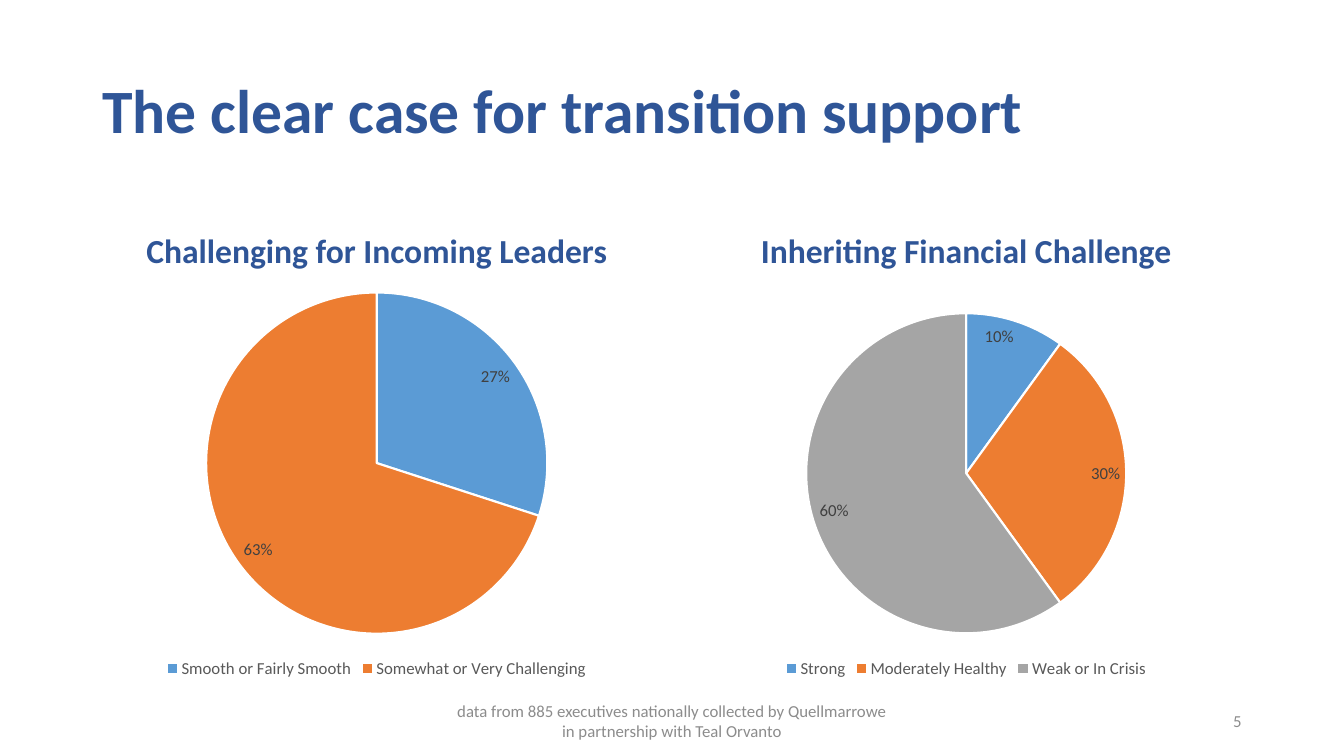
"""Build the transition support slide with its two pie charts."""
import pptx
import pptx.chart.data
import pptx.dml.color
import pptx.enum.chart
import pptx.enum.text
import pptx.oxml
import pptx.oxml.ns
import pptx.util

Cm, Pt = pptx.util.Cm, pptx.util.Pt
RGB = pptx.dml.color.RGBColor
ALIGN = pptx.enum.text.PP_ALIGN
ANCHOR = pptx.enum.text.MSO_ANCHOR
CHART = pptx.enum.chart

NAVY = RGB(0x2F, 0x55, 0x97)
FOOTER_GRAY = RGB(0x8C, 0x8C, 0x8C)
LEGEND_GRAY = RGB(0x59, 0x59, 0x59)
LABEL_GRAY = RGB(0x40, 0x40, 0x40)
WHITE = RGB(0xFF, 0xFF, 0xFF)
SLICES = [RGB(0x5B, 0x9B, 0xD5), RGB(0xED, 0x7D, 0x31), RGB(0xA5, 0xA5, 0xA5)]
FONT = "Calibri"

TITLE = "The clear case for transition support"
SOURCE = ("data from 885 executives nationally collected by Quellmarrowe "
          "in partnership with Teal Orvanto")
PAGE = "5"
PANELS = [
    {"heading": "Challenging for Incoming Leaders", "left": 2.33, "width": 14.33,
     "shares": {"Smooth or Fairly Smooth": 0.27, "Somewhat or Very Challenging": 0.63},
     "pie": {"x": 0.2, "y": 0.04, "w": 0.6, "h": 0.84}},
    {"heading": "Inheriting Financial Challenge", "left": 17.15, "width": 14.4,
     "shares": {"Strong": 0.1, "Moderately Healthy": 0.3, "Weak or In Crisis": 0.6},
     "pie": {"x": 0.22, "y": 0.09, "w": 0.56, "h": 0.79}},
]
HEADING_TOP, HEADING_HEIGHT = 4.67, 2.29
CHART_TOP, CHART_HEIGHT = HEADING_TOP + HEADING_HEIGHT, 10.24
FOOTER_TOP, FOOTER_HEIGHT = 17.65, 1.02

TITLE_FONT = {"name": FONT, "size": Pt(44), "bold": True}
HEADING_FONT = {"name": FONT, "size": Pt(24), "bold": True}
SMALL_FONT = {"name": FONT, "size": Pt(12), "bold": False}


def style(font, values, color):
    for key, value in values.items():
        setattr(font, key, value)
    font.color.rgb = color


def add_text(slide, box, text, font, color, anchor, paragraph_format):
    frame = slide.shapes.add_textbox(*map(Cm, box)).text_frame
    frame.word_wrap = True
    frame.vertical_anchor = anchor
    paragraph = frame.paragraphs[0]
    for key, value in paragraph_format.items():
        setattr(paragraph, key, value)
    run = paragraph.add_run()
    run.text = text
    style(run.font, font, color)


def place_pie(chart, pie):
    plot_area = chart.element.xpath("c:chart/c:plotArea")[0]
    for layout in plot_area.xpath("c:layout"):
        plot_area.remove(layout)
    modes = '<c:layoutTarget val="inner"/><c:xMode val="edge"/><c:yMode val="edge"/>'
    sizes = "".join(f'<c:{key} val="{value}"/>' for key, value in pie.items())
    plot_area.insert(0, pptx.oxml.parse_xml(
        f'<c:layout {pptx.oxml.ns.nsdecls("c")}><c:manualLayout>'
        f'{modes}{sizes}</c:manualLayout></c:layout>'))


def add_pie(slide, box, shares, pie):
    data = pptx.chart.data.CategoryChartData(number_format="0%")
    data.categories = list(shares)
    data.add_series("Series 1", list(shares.values()))
    chart = slide.shapes.add_chart(CHART.XL_CHART_TYPE.PIE, *map(Cm, box), data).chart
    chart.has_title = False
    chart.has_legend = True
    chart.legend.position = CHART.XL_LEGEND_POSITION.BOTTOM
    chart.legend.include_in_layout = False
    style(chart.font, SMALL_FONT, LABEL_GRAY)
    style(chart.legend.font, SMALL_FONT, LEGEND_GRAY)

    plot = chart.plots[0]
    plot.vary_by_categories = True
    plot.has_data_labels = True
    labels = plot.data_labels
    for key, value in {"show_value": True, "show_percentage": False,
                       "number_format": "0%", "number_format_is_linked": False,
                       "position": CHART.XL_LABEL_POSITION.INSIDE_END}.items():
        setattr(labels, key, value)
    style(labels.font, SMALL_FONT, LABEL_GRAY)
    for index, color in zip(range(len(shares)), SLICES):
        slice_format = plot.series[0].points[index].format
        slice_format.fill.solid()
        slice_format.fill.fore_color.rgb = color
        slice_format.line.color.rgb = WHITE
        slice_format.line.width = Pt(1.5)
    place_pie(chart, pie)


def main():
    deck = pptx.Presentation()
    deck.slide_width, deck.slide_height = Cm(33.87), Cm(19.05)
    slide = deck.slides.add_slide(deck.slide_layouts[6])
    add_text(slide, (2.33, 1.01, 29.21, 3.68), TITLE, TITLE_FONT, NAVY,
             ANCHOR.MIDDLE, {"line_spacing": 0.9})
    for panel in PANELS:
        left, width = panel["left"], panel["width"]
        add_text(slide, (left, HEADING_TOP, width, HEADING_HEIGHT), panel["heading"],
                 HEADING_FONT, NAVY, ANCHOR.BOTTOM,
                 {"alignment": ALIGN.CENTER, "line_spacing": 0.9, "space_before": Pt(10)})
        add_pie(slide, (left, CHART_TOP, width, CHART_HEIGHT),
                panel["shares"], panel["pie"])
    for text, left, width, alignment in [(SOURCE, 11.22, 11.43, ALIGN.CENTER),
                                         (PAGE, 23.92, 7.62, ALIGN.RIGHT)]:
        add_text(slide, (left, FOOTER_TOP, width, FOOTER_HEIGHT), text, SMALL_FONT,
                 FOOTER_GRAY, ANCHOR.MIDDLE, {"alignment": alignment})
    deck.save("out.pptx")


if __name__ == "__main__":
    main()
